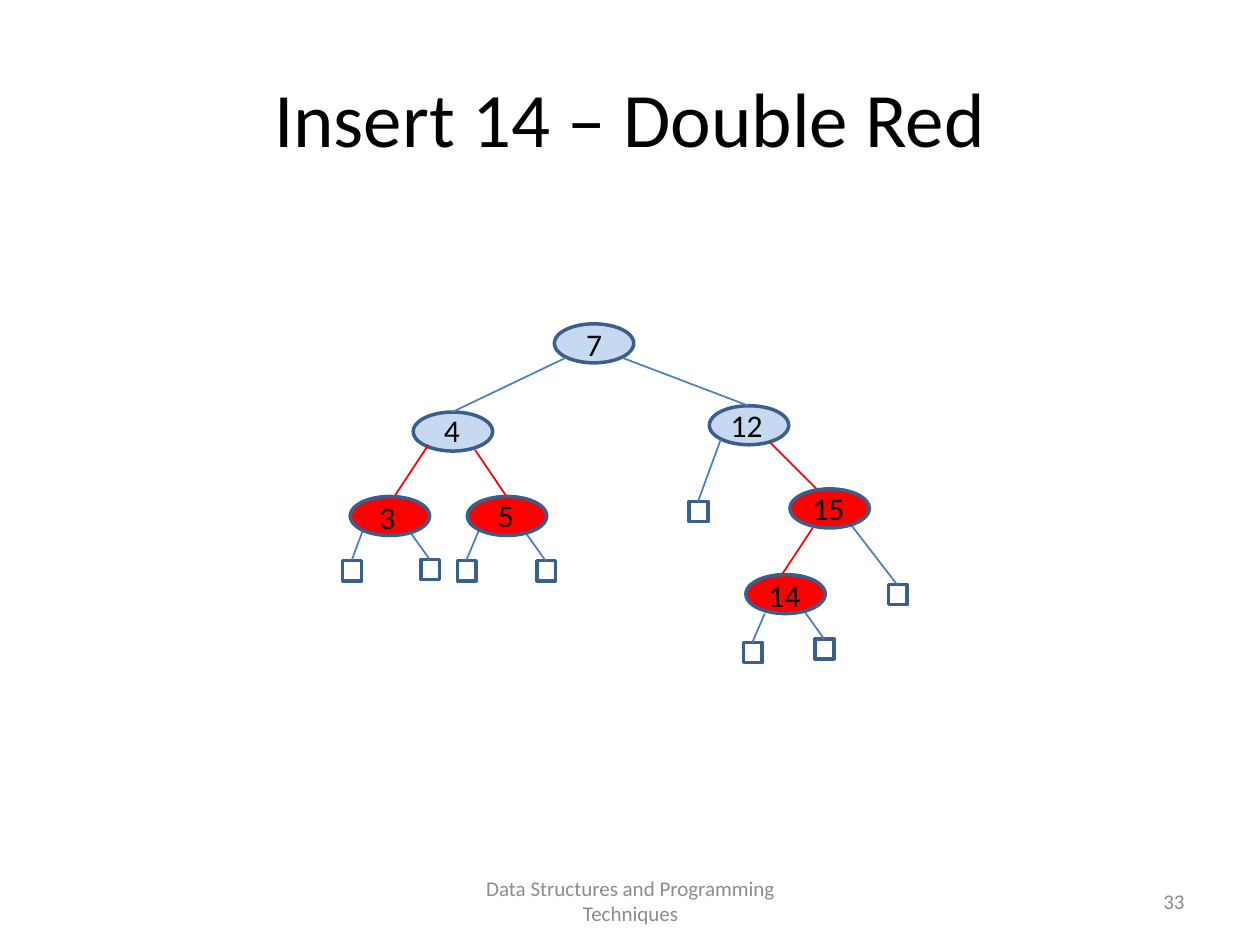
from pptx import Presentation
from pptx.dml.color import RGBColor
from pptx.enum.shapes import MSO_CONNECTOR, MSO_SHAPE
from pptx.enum.text import MSO_ANCHOR, PP_ALIGN
from pptx.oxml.ns import qn
from pptx.util import Pt
from lxml.etree import SubElement

PX = 9144
NODE_SIZE = (63, 31)
LEAF_SIZE = (15, 16)
LABEL_SIZE = (49, 40)
COLORS = {
    "text": "000000",
    "footer": "8C8C8C",
    "outline": "3A5F8C",
    "black": "C6D9F1",
    "red": "FF0000",
    "black_edge": "4F81BD",
    "leaf_edge": "4B7EBC",
}

# key, node corner, label corner
BLACK_NODES = [
    ("4", (328, 327), (334, 321)),
    ("7", (440, 257), (447, 253)),
    ("12", (563, 322), (568, 317)),
]
RED_NODES = [
    ("15", (627, 388), (633, 383)),
    ("3", (278, 394), (283, 390)),
    ("5", (371, 394), (377, 389)),
    ("14", (592, 456), (598, 452)),
]
BLACK_EDGES = [((494, 284), (594, 322)), ((449, 284), (359, 327))]
RED_EDGES = [
    ((611, 351), (649, 389)),
    ((340, 353), (313, 394)),
    ((377, 357), (402, 394)),
    ((645, 419), (612, 469)),
]
# edge start, leaf corner
LEAVES = [
    ((572, 349), (547, 398)),
    ((675, 416), (705, 464)),
    ((326, 423), (334, 444)),
    ((288, 421), (272, 445)),
    ((380, 421), (363, 445)),
    ((418, 424), (426, 445)),
    ((607, 487), (590, 510)),
    ((639, 486), (647, 507)),
]


def px(*lengths):
    """Turn whole px lengths into EMU."""
    return [length * PX for length in lengths]


def rgb(name):
    """Look up a palette colour."""
    return RGBColor.from_string(COLORS[name])


def style_text(frame, text, size, color, align, anchor):
    """Write one line of text and format it."""
    frame.text = text
    frame.word_wrap = True
    frame.vertical_anchor = anchor
    paragraph = frame.paragraphs[0]
    paragraph.alignment = align
    font = paragraph.runs[0].font
    font.name, font.size, font.color.rgb = "Calibri", Pt(size), rgb(color)


def add_title(slide, text):
    """Place and format the title placeholder."""
    title = slide.shapes.title
    title.left, title.top, title.width, title.height = px(50, 30, 900, 125)
    style_text(title.text_frame, text, 44, "text", PP_ALIGN.CENTER, MSO_ANCHOR.MIDDLE)


def add_text(slide, text, corner, extent, size, color, align, anchor):
    """Add a text box."""
    box = slide.shapes.add_textbox(*px(*corner, *extent))
    style_text(box.text_frame, text, size, color, align, anchor)


def add_outlined(slide, preset, corner, extent, fill=None):
    """Add a tree node or leaf with the shared outline."""
    shape = slide.shapes.add_shape(preset, *px(*corner, *extent))
    shape.shadow.inherit = False
    if fill:
        shape.fill.solid()
        shape.fill.fore_color.rgb = rgb(fill)
    else:
        shape.fill.background()
    shape.line.color.rgb = rgb("outline")
    shape.line.width = Pt(2)


def add_edge(slide, start, end, color):
    """Add a straight edge of the tree."""
    edge = slide.shapes.add_connector(MSO_CONNECTOR.STRAIGHT, *px(*start, *end))
    edge.line.color.rgb = rgb(color)
    edge.line.width = Pt(1)
    SubElement(edge._element.spPr, qn("a:effectLst"))


def add_nodes(slide, nodes, fill):
    """Add the nodes of one colour with their keys."""
    for key, corner, label_corner in nodes:
        add_outlined(slide, MSO_SHAPE.OVAL, corner, NODE_SIZE, fill)
        add_text(slide, key, label_corner, LABEL_SIZE, 18, "text",
                 PP_ALIGN.CENTER, MSO_ANCHOR.TOP)


def add_leaf(slide, start, corner):
    """Add an empty leaf and the edge to its top centre."""
    left, top = corner
    add_outlined(slide, MSO_SHAPE.RECTANGLE, corner, LEAF_SIZE)
    add_edge(slide, start, (left + LEAF_SIZE[0] // 2, top), "leaf_edge")


def main():
    """Build the red-black tree slide."""
    deck = Presentation()
    deck.slide_width, deck.slide_height = px(1000, 750)
    slide = deck.slides.add_slide(deck.slide_layouts[5])
    add_title(slide, "Insert 14 – Double Red")
    add_text(slide, "Data Structures and Programming Techniques", (342, 695), (317, 40),
             12, "footer", PP_ALIGN.CENTER, MSO_ANCHOR.MIDDLE)
    add_text(slide, "33", (717, 695), (233, 40),
             12, "footer", PP_ALIGN.RIGHT, MSO_ANCHOR.MIDDLE)
    add_nodes(slide, BLACK_NODES, "black")
    for color, edges in (("black_edge", BLACK_EDGES), ("red", RED_EDGES)):
        for start, end in edges:
            add_edge(slide, start, end, color)
    for start, corner in LEAVES:
        add_leaf(slide, start, corner)
    add_nodes(slide, RED_NODES, "red")
    deck.save("out.pptx")


if __name__ == "__main__":
    main()
